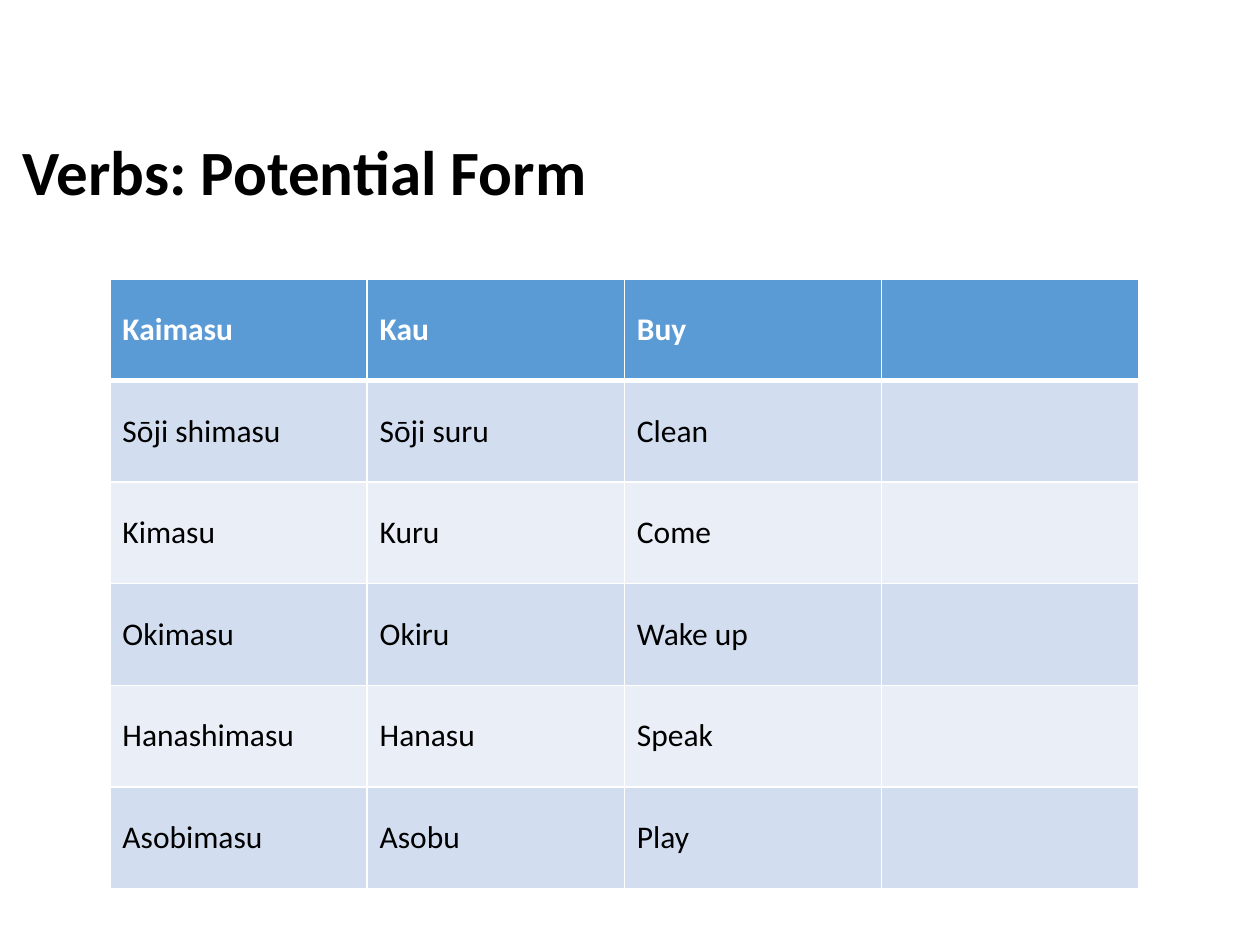
from lxml import etree
from pptx import Presentation
from pptx.dml.color import RGBColor
from pptx.enum import text
from pptx.oxml import ns
from pptx.util import Pt

FONT = "Calibri"
VERBS = [
    ("Kaimasu", "Kau", "Buy", ""),
    ("Sōji shimasu", "Sōji suru", "Clean", ""),
    ("Kimasu", "Kuru", "Come", ""),
    ("Okimasu", "Okiru", "Wake up", ""),
    ("Hanashimasu", "Hanasu", "Speak", ""),
    ("Asobimasu", "Asobu", "Play", ""),
]


def rgb(value):
    return RGBColor.from_string(value)


def style_text(tf, size, color, bold):
    for p in tf.paragraphs:
        p.alignment = text.PP_ALIGN.LEFT
        for f in [p.font] + [r.font for r in p.runs]:
            f.name, f.size, f.bold = FONT, Pt(size), bold
            f.color.rgb = rgb(color)


def add_border(cell, side, width, color):
    tc_pr = cell._tc.get_or_add_tcPr()
    ln = etree.SubElement(tc_pr, ns.qn(f"a:ln{side}"), w=str(Pt(width)))
    fill = etree.SubElement(ln, ns.qn("a:solidFill"))
    etree.SubElement(fill, ns.qn("a:srgbClr"), val=color)


def add_title(s, x, y, w, h):
    sp = s.shapes.title
    sp.left, sp.top, sp.width, sp.height = Pt(x), Pt(y), Pt(w), Pt(h)
    tf = sp.text_frame
    tf.text = "Verbs: Potential Form"
    tf.word_wrap = True
    tf.auto_size = text.MSO_AUTO_SIZE.SHAPE_TO_FIT_TEXT
    tf.vertical_anchor = text.MSO_ANCHOR.TOP
    style_text(tf, 36, "000000", True)


def style_cell(cell, row):
    header = row == 0
    widths = {"L": 1, "R": 1, "T": 3 if row == 1 else 1, "B": 3 if header else 1}
    for side, width in widths.items():
        add_border(cell, side, width, "FFFFFF")
    cell.fill.solid()
    cell.fill.fore_color.rgb = rgb("5B9BD5" if header else ("EAEFF7", "D2DEEF")[row % 2])
    cell.vertical_anchor = text.MSO_ANCHOR.MIDDLE
    style_text(cell.text_frame, 18, "FFFFFF" if header else "000000", header)


def add_verb_table(s, x, y, w, h):
    table = s.shapes.add_table(
        len(VERBS), len(VERBS[0]), Pt(x), Pt(y), Pt(w), Pt(h)
    ).table
    for i, verb in enumerate(VERBS):
        for j, word in enumerate(verb):
            cell = table.cell(i, j)
            cell.text_frame.text = word
            style_cell(cell, i)


def main():
    prs = Presentation()
    prs.slide_width, prs.slide_height = Pt(720), Pt(540)
    s = prs.slides.add_slide(prs.slide_layouts[5])
    add_title(s, 5.76, 72, 644.4, 51)
    add_verb_table(s, 62.8, 159.3, 588, 348.6)
    prs.save("out.pptx")


if __name__ == "__main__":
    main()
